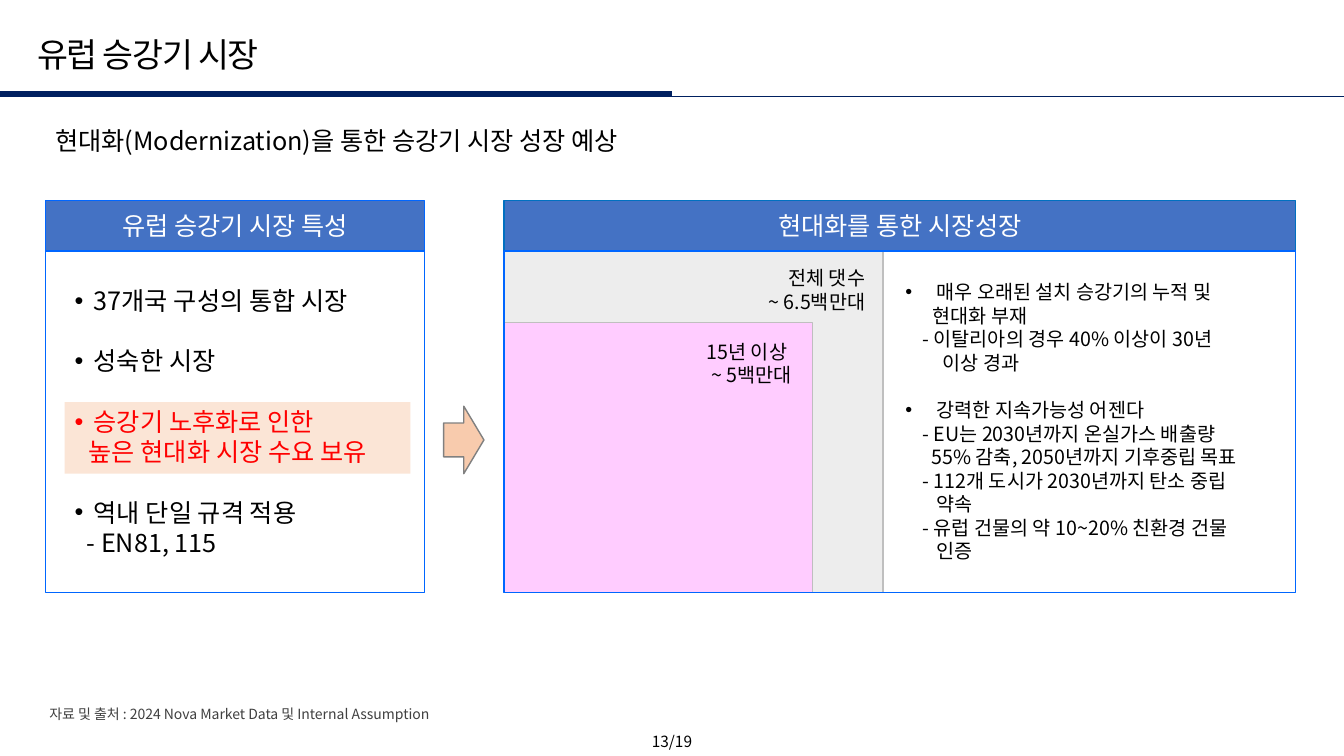
import pptx
import pptx.util
import pptx.dml.color
import pptx.enum.shapes
import pptx.enum.text
import pptx.oxml.ns
from lxml import etree

Inch, Pt = pptx.util.Inches, pptx.util.Pt
Kind = pptx.enum.shapes.MSO_SHAPE
Align = pptx.enum.text.PP_ALIGN
Anchor = pptx.enum.text.MSO_ANCHOR
qn = pptx.oxml.ns.qn

# Content: list lines are (text, left indent, bullet, gap above, colour)
TITLE = "유럽 승강기 시장"
LEAD = "현대화(Modernization)을 통한 승강기 시장 성장 예상"
HEADS = ["유럽 승강기 시장 특성", "현대화를 통한 시장성장"]
TRAITS = [
    ("37개국 구성의 통합 시장", 0.19, True, False, "ink"),
    ("성숙한 시장", 0.19, True, True, "ink"),
    ("승강기 노후화로 인한", 0.19, True, True, "alert"),
    ("높은 현대화 시장 수요 보유", 0.14, False, False, "alert"),
    ("역내 단일 규격 적용", 0.19, True, True, "ink"),
    ("- EN81, 115", 0.12, False, False, "ink"),
]
DRIVERS = [
    ("매우 오래된 설치 승강기의 누적 및", 0.31, True, False, "ink"),
    ("현대화 부재", 0.27, False, False, "ink"),
    ("- 이탈리아의 경우 40% 이상이 30년", 0.17, False, False, "ink"),
    ("이상 경과", 0.37, False, False, "ink"),
    ("강력한 지속가능성 어젠다", 0.31, True, True, "ink"),
    ("- EU는 2030년까지 온실가스 배출량", 0.17, False, False, "ink"),
    ("55% 감축, 2050년까지 기후중립 목표", 0.26, False, False, "ink"),
    ("- 112개 도시가 2030년까지 탄소 중립", 0.17, False, False, "ink"),
    ("약속", 0.31, False, False, "ink"),
    ("- 유럽 건물의 약 10~20% 친환경 건물", 0.17, False, False, "ink"),
    ("인증", 0.31, False, False, "ink"),
]
TOTAL = ["전체 댓수", "~ 6.5백만대"]
AGED = ["15년 이상 ", "~ 5백만대"]
SOURCE = "자료 및 출처 : 2024 Nova Market Data 및 Internal Assumption"
PAGE = "13/19"


class Theme:
    font, face = "Noto Sans CJK KR", "Arial"
    title, head, body, note, page = 24, 18, 14, 10, 11
    lead = 1.2
    hue = {
        "ink": "000000", "alert": "FF0000", "white": "FFFFFF", "grey": "404040",
        "navy": "002060", "head": "4472C4", "frame": "0066FF", "rim": "0070C0",
        "total": "EDEDED", "aged": "FFCCFF", "edge": "BFBFBF",
        "mark": "FBE5D6", "arrow": "F8CBAD", "dim": "808080",
    }


# Grid
WIDE, HIGH = 13.33, 7.5
MID = WIDE / 2
COLS = [(0.45, 3.76), (5, 7.85)]
TOP, BAR, DEEP = 1.99, 0.5, 3.39
BODY = TOP + BAR
BASE = BODY + DEEP

deck = pptx.Presentation()
deck.slide_width, deck.slide_height = Inch(WIDE), Inch(HIGH)
slide = deck.slides.add_slide(deck.slide_layouts[3])
tree = slide.shapes
slots = list(slide.placeholders)


def tint(name):
    return pptx.dml.color.RGBColor.from_string(Theme.hue[name])


def write(frame, lines, size, align=Align.LEFT, anchor=Anchor.TOP,
          face=Theme.font, wrap=True, track=None):
    frame.word_wrap = wrap
    frame.auto_size = pptx.enum.text.MSO_AUTO_SIZE.NONE
    frame.vertical_anchor = anchor
    for i, (text, left, dot, gap, hue) in enumerate(lines):
        para = frame.paragraphs[0] if i == 0 else frame.add_paragraph()
        para.alignment = align
        para.line_spacing = Pt(size * Theme.lead)
        para.space_before = Pt(size * Theme.lead if gap else 0)
        para.space_after = Pt(0)
        prop = para._p.get_or_add_pPr()
        prop.set("marL", str(Inch(left)))
        prop.set("indent", str(-Inch(left) if dot else 0))
        if dot:
            etree.SubElement(prop, qn("a:buFont")).set("typeface", Theme.face)
            etree.SubElement(prop, qn("a:buChar")).set("char", "•")
        else:
            etree.SubElement(prop, qn("a:buNone"))
        run = para.add_run()
        run.text = text
        run.font.size, run.font.name = Pt(size), face
        run.font.color.rgb = tint(hue)
        mark = run._r.get_or_add_rPr()
        etree.SubElement(mark, qn("a:ea")).set("typeface", Theme.font)
        if track:
            mark.set("spc", str(track))


def plain(*texts, hue="ink", left=0):
    return [(text, left, False, False, hue) for text in texts]


def place(item, x, y, w, h):
    item.left, item.top, item.width, item.height = map(Inch, (x, y, w, h))
    tree._spTree.append(item._element)
    return item.text_frame


def label(lines, size, x, y, w, h, **style):
    box = tree.add_textbox(Inch(x), Inch(y), Inch(w), Inch(h))
    write(box.text_frame, lines, size, **style)


def block(x, y, w, h, fill=None, edge=None, kind=Kind.RECTANGLE):
    part = tree.add_shape(kind, Inch(x), Inch(y), Inch(w), Inch(h))
    part.shadow.inherit = False
    if fill:
        part.fill.solid()
        part.fill.fore_color.rgb = tint(fill)
    else:
        part.fill.background()
    if edge:
        part.line.color.rgb = tint(edge)
        part.line.width = Pt(1)
    else:
        part.line.fill.background()
    return part


def rule(x, end, y, width):
    line = tree.add_connector(pptx.enum.shapes.MSO_CONNECTOR.STRAIGHT,
                              Inch(x), Inch(y), Inch(end), Inch(y))
    line.line.color.rgb, line.line.width = tint("navy"), Pt(width)
    etree.SubElement(line._element.spPr, qn("a:effectLst"))


# Title, rules and lead line
rule(0, MID, 0.93, 4.5)
rule(MID, WIDE, 0.95, 0.25)
write(place(slots[0], 0, 0.29, 9.58, 0.5), plain(TITLE, left=0.27),
      Theme.title, face=Theme.face, track=-90)
label(plain(LEAD), Theme.head, 0.45, 1.19, 6.25, 0.4, wrap=False)

# Market size areas, nested at the lower left of the right panel
left, side = COLS[1][0], COLS[0][1]
block(left, BODY, side, DEEP, "total", "edge")
block(left, 3.2, 3.06, BASE - 3.2, "aged", "edge")
for lines, x, y in [(AGED, 6.67, 3.32), (TOTAL, 7.4, 2.59)]:
    label(plain(*lines), Theme.body, x, y, 1.28, 0.57, align=Align.RIGHT)

# Panels with header bars
for (x, w), head, edge in zip(COLS, HEADS, ["frame", "rim"]):
    bar = block(x, TOP, w, BAR, "head", edge)
    write(bar.text_frame, plain(head, hue="white"), Theme.head,
          align=Align.CENTER, anchor=Anchor.MIDDLE)
    block(x, BODY, w, DEEP, edge="frame")

# Lists, highlight and arrow
block(0.64, 3.99, 3.43, 0.71, "mark")
write(place(slots[1], 0.64, 2.78, 3.57, 2.83), TRAITS, Theme.head)
write(place(slots[2], 8.88, 2.73, 3.93, 2.93), DRIVERS, Theme.body)
block(4.4, 4.03, 0.4, 0.67, "arrow", "dim", Kind.RIGHT_ARROW)

# Footer
label(plain(SOURCE, hue="grey"), Theme.note, 0.39, 6.95, 6.68, 0.27)
label(plain(PAGE), Theme.page, MID - 0.32, 7.21, 0.64, 0.29, align=Align.CENTER)

deck.save("out.pptx")
